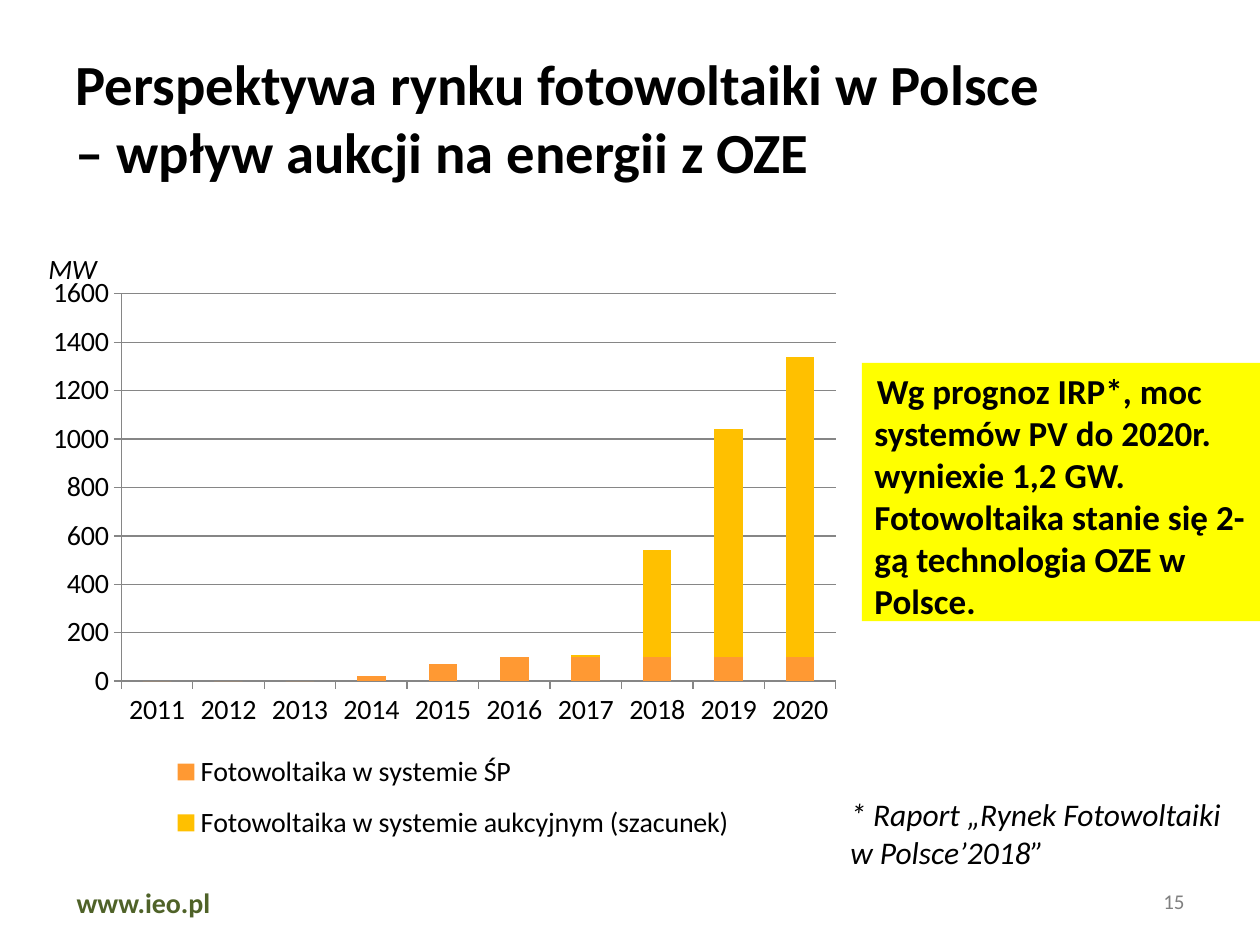
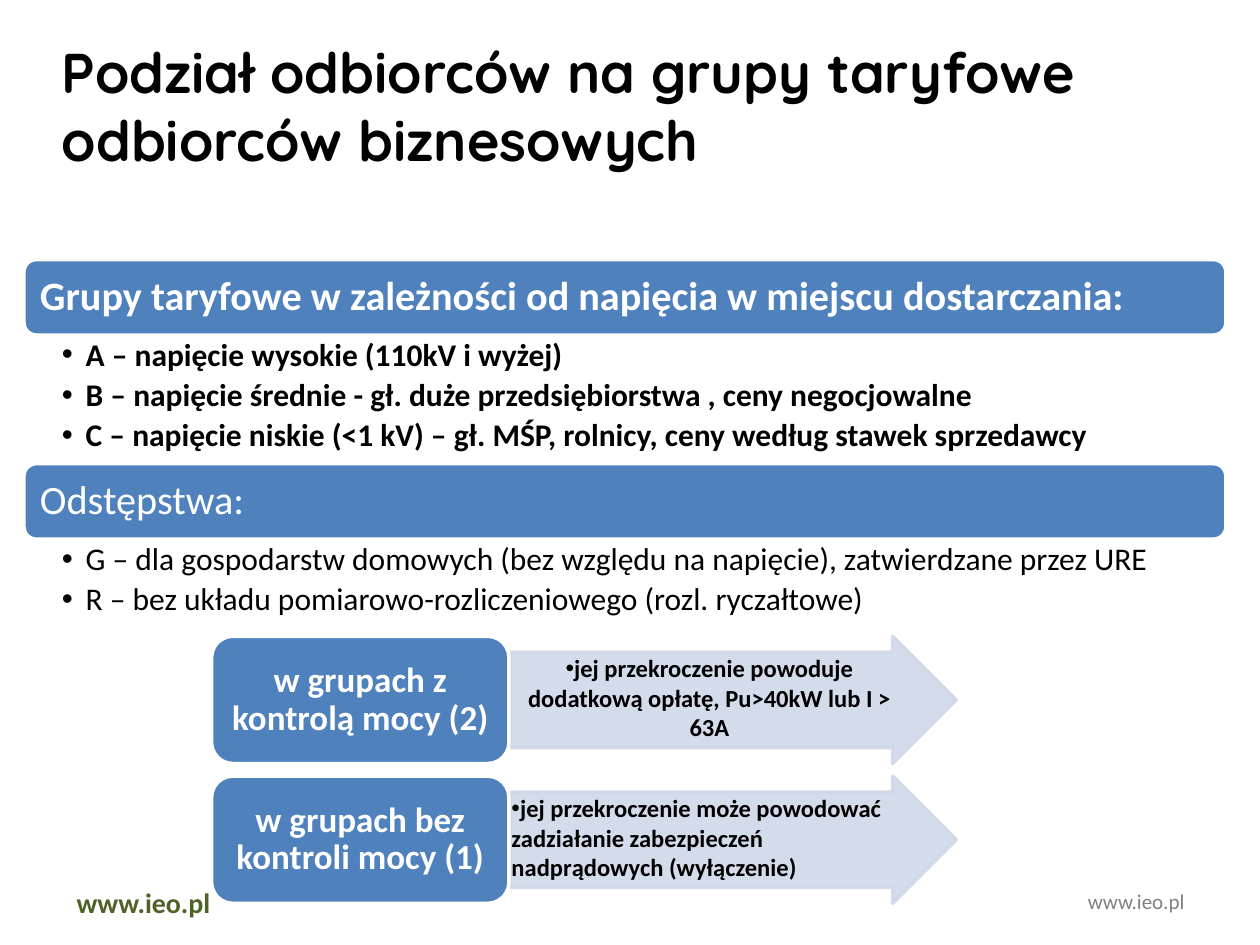
from pptx import Presentation
from pptx.chart.data import CategoryChartData
from pptx.dml.color import RGBColor
from pptx.enum.chart import XL_CHART_TYPE as CT, XL_LEGEND_POSITION as LP, XL_TICK_MARK as TM
from pptx.enum.shapes import MSO_SHAPE as MS
from pptx.enum.text import MSO_ANCHOR as MA, MSO_AUTO_SIZE as AS, PP_ALIGN as PA
from pptx.oxml.ns import qn
from pptx.util import Inches, Pt
from lxml.etree import SubElement, Element

HEX = {"black": "000000", "white": "FFFFFF", "green": "4F6228", "grey": "808080",
       "yellow": "FFFF00", "blue": "4F81BD", "pale": "D0D8E8",
       "orange": "FF9933", "amber": "FFC000", "grid": "868686"}
C = {name: RGBColor.from_string(value) for name, value in HEX.items()}


def put(sp, text, at=None, size=18, color="black", font="Calibri", bold=False, italic=False,
        align=PA.LEFT, anchor=MA.TOP, wrap=True, inset=(0.1, 0.05, 0.1, 0.05),
        spacing=1, after=0, bullet=None, indent=(0, 0), fill=None, line=None):
    """Place a shape and fill it with formatted text, one paragraph per item."""
    if at:
        sp.left, sp.top, sp.width, sp.height = map(Inches, at)
    if fill:
        sp.fill.solid()
        sp.fill.fore_color.rgb = C[fill]
    if line:
        sp.shadow.inherit = False
        sp.line.color.rgb = C[line]
        sp.line.width = Pt(2)
    tf = sp.text_frame
    tf.auto_size, tf.word_wrap, tf.vertical_anchor = AS.NONE, wrap, anchor
    tf.margin_left, tf.margin_top, tf.margin_right, tf.margin_bottom = map(Inches, inset)
    for i, item in enumerate([text] if isinstance(text, str) else text):
        p = tf.add_paragraph() if i else tf.paragraphs[0]
        p.text = item
        p.alignment, p.line_spacing = align, spacing
        p.space_before, p.space_after = Pt(0), Pt(after)
        pPr = p._p.get_or_add_pPr()
        pPr.set("marL", str(Inches(indent[0])))
        pPr.set("indent", str(Inches(indent[1])))
        if bullet:
            SubElement(pPr, qn("a:buFont"), typeface="Arial")
            SubElement(pPr, qn("a:buChar"), char=bullet)
        else:
            SubElement(pPr, qn("a:buNone"))
        for r in p.runs:
            r.font.name, r.font.size = font, Pt(size)
            r.font.bold, r.font.italic = bold, italic
            r.font.color.rgb = C[color]


def set_layout(part, index, **values):
    """Give a chart part a manual layout."""
    for old in part.findall(qn("c:layout")):
        part.remove(old)
    layout = Element(qn("c:layout"))
    part.insert(index, layout)
    manual = SubElement(layout, qn("c:manualLayout"))
    for tag, value in values.items():
        SubElement(manual, qn("c:" + tag), val=str(value))


prs = Presentation()
prs.slide_width, prs.slide_height = Inches(10), Inches(7.5)

# Shared title and footers
pages = [
    (1, "Perspektywa rynku fotowoltaiki w Polsce\v– wpływ aukcji na energii z OZE",
     (0.5, 0.3, 9, 1.25), 32.4, "Calibri", "15"),
    (3, "Podział odbiorców na grupy taryfowe odbiorców biznesowych",
     (0.39, 0.21, 8.5, 1.25), 32, "Quicksand", "www.ieo.pl"),
]
slides = []
for layout, title, at, size, font, footer in pages:
    s = prs.slides.add_slide(prs.slide_layouts[layout])
    put(s.shapes.title, title, at, size=size, font=font, bold=True, anchor=MA.MIDDLE)
    put(s.shapes.add_textbox(0, 0, 0, 0), "www.ieo.pl", (0.51, 6.98, 1.27, 0.37),
        size=16, color="green", bold=True, wrap=False)
    put(s.shapes.add_textbox(0, 0, 0, 0), footer, (7.17, 6.95, 2.33, 0.4),
        size=12, color="grey", align=PA.RIGHT, anchor=MA.MIDDLE)
    slides.append(s)
market, tariffs = slides

# Market slide: forecast and source note
put(market.placeholders[1],
    "Wg prognoz IRP*, moc systemów PV do 2020r. wyniexie 1,2 GW. "
    "Fotowoltaika stanie się 2-gą technologia OZE w Polsce.",
    (6.84, 2.88, 3.19, 2.05), size=20, bold=True, fill="yellow", indent=(0, 0.02))
put(market.shapes.add_textbox(0, 0, 0, 0), "* Raport „Rynek Fotowoltaiki w Polsce’2018”",
    (6.65, 6.26, 3.15, 0.71), italic=True)

# Market slide: stacked capacity chart
data = CategoryChartData()
data.categories = [str(year) for year in range(2011, 2021)]
data.add_series("Fotowoltaika w systemie ŚP", [0, 0, 0, 20, 70] + [100] * 5)
data.add_series("Fotowoltaika w systemie aukcyjnym (szacunek)",
                [None] * 6 + [10, 440, 940, 1240])
chart = market.shapes.add_chart(CT.COLUMN_STACKED, Inches(0.28), Inches(1.94),
                                Inches(6.38), Inches(4.96), data).chart
chart.font.name, chart.font.size = "Calibri", Pt(16)
chart.font.color.rgb = C["black"]
chart.has_title = False
plot = chart.plots[0]
plot.gap_width, plot.overlap, plot.vary_by_categories = 150, 100, False
for series, color in zip(plot.series, ("orange", "amber")):
    series.format.fill.solid()
    series.format.fill.fore_color.rgb = C[color]

val_axis = chart.value_axis
val_axis.minimum_scale, val_axis.maximum_scale, val_axis.major_unit = 0, 1600, 200
val_axis.major_gridlines.format.line.color.rgb = C["grid"]
for axis in (chart.category_axis, val_axis):
    axis.major_tick_mark = TM.OUTSIDE
    axis.format.line.color.rgb = C["grid"]

unit = val_axis.axis_title
p = unit.text_frame.paragraphs[0]
r = p.add_run()
r.text = "MW"
r.font.name, r.font.size, r.font.bold, r.font.italic = "Calibri", Pt(16), False, True
r.font.color.rgb = C["black"]
body = unit._element.find(".//" + qn("a:bodyPr"))
body.set("rot", "0")
body.set("vert", "horz")

chart.has_legend = True
chart.legend.position, chart.legend.include_in_layout = LP.TOP, False
set_layout(unit._element, 1, xMode="edge", yMode="edge", x=0.01, y=0)
set_layout(chart.legend._element, 1, xMode="edge", yMode="edge", x=0.16, y=0.79, w=0.72, h=0.19)
set_layout(chart._chartSpace.chart.plotArea, 0, layoutTarget="inner", xMode="edge",
           yMode="edge", x=0.107, y=0.079, w=0.889, h=0.62)

# Tariff slide: headed lists
groups = [
    (2.06, 1.02, True, "Grupy taryfowe w zależności od napięcia w miejscu dostarczania:",
     ["A – napięcie wysokie (110kV i wyżej)",
      "B – napięcie średnie - gł. duże przedsiębiorstwa , ceny negocjowalne",
      "C – napięcie niskie (<1 kV) – gł. MŚP, rolnicy, ceny według stawek sprzedawcy"]),
    (3.68, 0.68, False, "Odstępstwa:",
     ["G – dla gospodarstw domowych (bez względu na napięcie), zatwierdzane przez URE",
      "R – bez układu pomiarowo-rozliczeniowego (rozl. ryczałtowe)"]),
]
for idx, (top, height, bold, heading, items) in enumerate(groups, 1):
    put(tariffs.shapes.add_shape(MS.ROUNDED_RECTANGLE, 0, 0, 0, 0), heading,
        (0.19, top, 9.54, 0.6), size=23, color="white", bold=bold, anchor=MA.MIDDLE,
        inset=(0.1,) * 4, spacing=0.9, fill="blue", line="white")
    put(tariffs.placeholders[idx], items, (0.19, top + 0.6, 9.54, height), bold=bold,
        inset=(0.3, 0.03, 0.18, 0.03), spacing=0.9, after=3.6, bullet="•", indent=(0.19, -0.19))

# Tariff slide: power control boxes with arrows
controls = [
    ("w grupach z kontrolą mocy (2)", PA.CENTER,
     "jej przekroczenie powoduje dodatkową opłatę, Pu>40kW lub I > 63A"),
    ("w grupach bez kontroli mocy (1)", PA.LEFT,
     "jej przekroczenie może powodować zadziałanie zabezpieczeń nadprądowych (wyłączenie)"),
]
for i, (group, align, effect) in enumerate(controls):
    top = 5.05 + 1.11 * i
    arrow = tariffs.shapes.add_shape(MS.RIGHT_ARROW, 0, 0, 0, 0)
    arrow.adjustments[0], arrow.adjustments[1] = 0.75, 0.5
    put(arrow, effect, (4.05, top, 3.54, 1.01), size=14, bold=True, align=align,
        inset=(0.01,) * 4, bullet="•", fill="pale", line="pale")
    for clr in arrow._element.spPr.iter(qn("a:srgbClr")):
        SubElement(clr, qn("a:alpha"), val="90000")
    put(tariffs.shapes.add_shape(MS.ROUNDED_RECTANGLE, 0, 0, 0, 0), group,
        (1.68, top, 2.36, 1.01), size=20, color="white", bold=True, align=PA.CENTER,
        anchor=MA.MIDDLE, inset=(0.08, 0.04, 0.08, 0.04), spacing=0.9,
        fill="blue", line="white")

prs.save("out.pptx")
